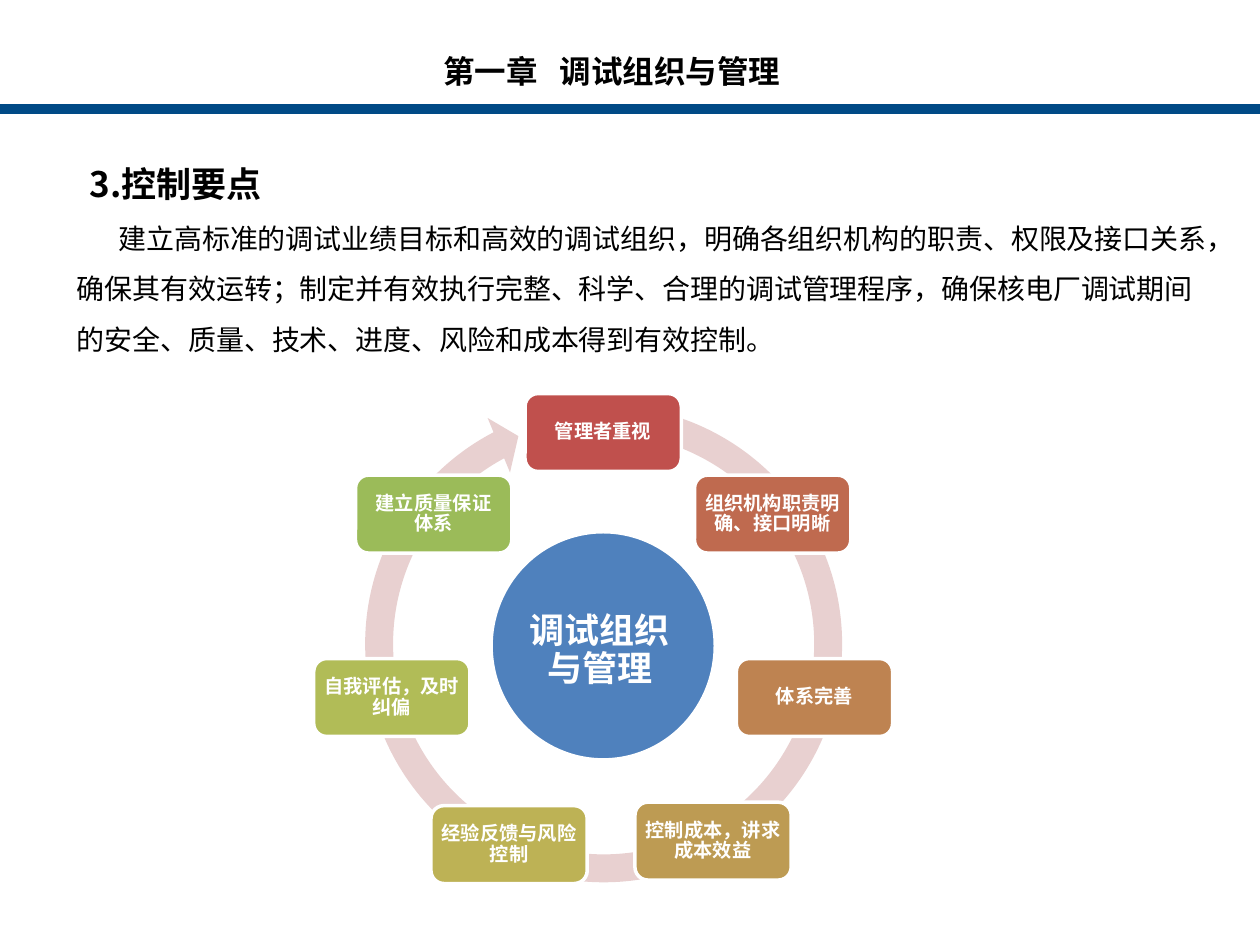
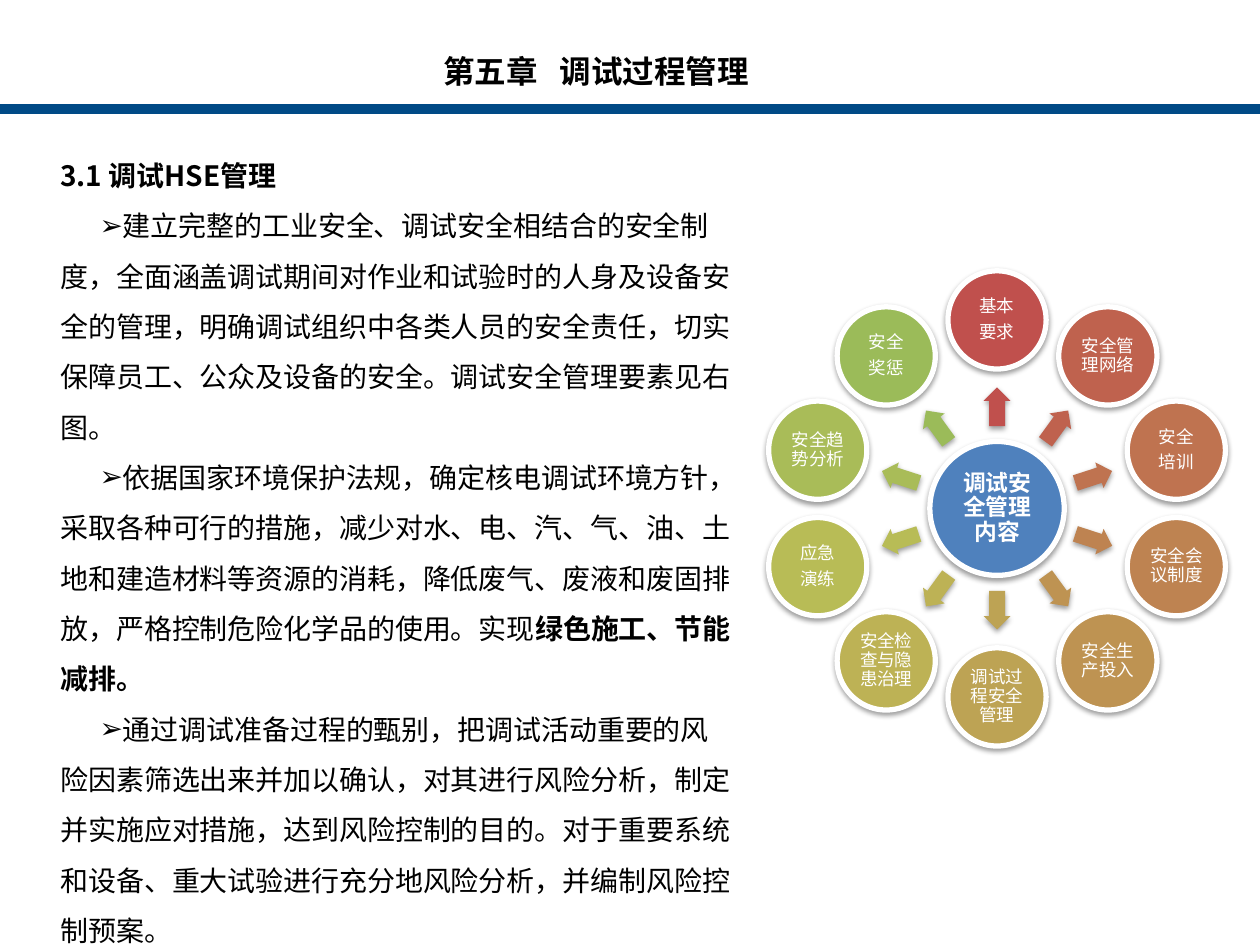
import colorsys
import math
from dataclasses import dataclass

from lxml import etree
from pptx import Presentation
from pptx import util as u
from pptx.dml.color import RGBColor
from pptx.enum import shapes, text
from pptx.oxml import ns

Cm, Pt = u.Cm, u.Pt
SHAPE = shapes.MSO_SHAPE


# Colours, fonts and type sizes
@dataclass(frozen=True)
class Theme:
    band: str = "004A86"
    ink: str = "000000"
    white: str = "FFFFFF"
    hub: str = "4F81BD"
    ring: str = "E8D0D0"
    first_node: str = "C0504D"
    last_node: str = "9BBB59"
    latin: str = "Calibri"
    chinese: str = "Noto Sans CJK SC"
    title: int = 18
    heading: int = 20
    body: int = 16
    node: int = 11
    satellite: int = 10
    hub_small: int = 13


def blend_hues(start, end, count):
    """Evenly spaced colours between two, along the hue circle."""
    first, last = (colorsys.rgb_to_hls(*(c / 255 for c in bytes.fromhex(code)))
                   for code in (start, end))
    colours = []
    for step in range(count):
        share = step / (count - 1)
        hls = [a + (b - a) * share for a, b in zip(first, last)]
        colours.append("".join(f"{round(c * 255):02X}" for c in colorsys.hls_to_rgb(*hls)))
    return colours


def orbit(centre, radius, degrees):
    """Point on a circle, with degrees clockwise from the top."""
    angle = math.radians(degrees)
    return centre[0] + radius * math.sin(angle), centre[1] - radius * math.cos(angle)


class Slides:
    def __init__(self, theme):
        self.theme = theme
        self.deck = Presentation()
        self.deck.slide_width, self.deck.slide_height = Cm(25.4), Cm(19.05)
        self.page = None

    def new_page(self, chapter, title):
        self.page = self.deck.slides.add_slide(self.deck.slide_layouts[6])
        self.shape(SHAPE.RECTANGLE, (12.7, 2.2), (25.4, 0.14),
                   self.theme.band, line=self.theme.band)
        frame = self.text_box(8.69, 0.93, 7.6, 1.02)
        para = frame.paragraphs[0]
        tabs = etree.SubElement(para._p.get_or_add_pPr(), ns.qn("a:tabLst"))
        etree.SubElement(tabs, ns.qn("a:tab"), pos=str(Cm(2.34)), algn="l")
        para.text = f"{chapter}\t{title}"
        self.style(para, self.theme.title, bold=True)

    def style(self, para, size, colour=None, bold=False, font=None):
        for span in para.runs:
            span.font.size, span.font.bold = Pt(size), bold
            span.font.name = font or self.theme.latin
            span.font.color.rgb = RGBColor.from_string(colour or self.theme.ink)
            properties = span._r.get_or_add_rPr()
            properties.set("lang", "zh-CN")
            etree.SubElement(properties, ns.qn("a:ea"), typeface=self.theme.chinese)

    def text_box(self, left, top, width, height):
        box = self.page.shapes.add_textbox(Cm(left), Cm(top), Cm(width), Cm(height))
        box.text_frame.word_wrap = True
        return box.text_frame

    def prose(self, para, content, size, first_line, margin=0, bullet=None,
              bold=False, font=None, bold_end=""):
        properties = para._p.get_or_add_pPr()
        properties.set("marL", str(Cm(margin)))
        properties.set("indent", str(Cm(first_line)))
        if bullet:
            etree.SubElement(properties, ns.qn("a:buFont"), typeface=self.theme.latin)
            etree.SubElement(properties, ns.qn("a:buChar"), char=bullet)
        para.line_spacing = 1.5
        para.text = content
        if bold_end:
            para.add_run().text = bold_end
        self.style(para, size, bold=bold, font=font)
        if bold_end:
            para.runs[-1].font.bold = True

    def shape(self, kind, centre, size, fill, line=None, line_width=2, shadow=False):
        (x, y), (width, height) = centre, size
        item = self.page.shapes.add_shape(kind, Cm(x - width / 2), Cm(y - height / 2),
                                          Cm(width), Cm(height))
        item.fill.solid()
        item.fill.fore_color.rgb = RGBColor.from_string(fill)
        if line:
            item.line.color.rgb = RGBColor.from_string(line)
            item.line.width = Pt(line_width)
        else:
            item.line.fill.background()
        item.shadow.inherit = False
        if shadow:
            effects = item._element.spPr.find(ns.qn("a:effectLst"))
            outer = etree.SubElement(effects, ns.qn("a:outerShdw"), blurRad=str(Pt(3.1)),
                                     dist=str(Pt(1.6)), dir="5400000", rotWithShape="0")
            colour = etree.SubElement(outer, ns.qn("a:srgbClr"), val=self.theme.ink)
            etree.SubElement(colour, ns.qn("a:alpha"), val="38000")
        return item

    def label(self, item, content, size, inset, bold=True, shift=(0, 0)):
        right, down = shift
        frame = item.text_frame
        frame.word_wrap = True
        frame.vertical_anchor = text.MSO_ANCHOR.MIDDLE
        frame.margin_left, frame.margin_right = Cm(inset + right), Cm(inset - right)
        frame.margin_top, frame.margin_bottom = Cm(inset + down), Cm(inset - down)
        frame.text = content
        for number, para in enumerate(frame.paragraphs):
            para.alignment = text.PP_ALIGN.CENTER
            para.line_spacing = 0.9
            if number:
                para.space_before = Pt(3.7)
            self.style(para, size, self.theme.white, bold)


def control_points(slides):
    theme = slides.theme
    slides.new_page("第一章", "调试组织与管理")

    # Heading and introduction
    frame = slides.text_box(1.3, 2.73, 23.39, 4.62)
    slides.prose(frame.paragraphs[0], "3.控制要点", theme.heading, 0.26,
                 bold=True, font=theme.chinese)
    slides.prose(frame.add_paragraph(),
                 "建立高标准的调试业绩目标和高效的调试组织，明确各组织机构的职责、权限及接口关系，"
                 "确保其有效运转；制定并有效执行完整、科学、合理的调试管理程序，确保核电厂调试期间"
                 "的安全、质量、技术、进度、风险和成本得到有效控制。", theme.body, 0.84)

    # Cycle of control points
    ring = slides.shape(SHAPE.CIRCULAR_ARROW, (12.17, 12.98), (10.24, 10.24), theme.ring)
    for index, value in enumerate((0.055, 3.307, 145.305, 169.418, 0.058)):
        ring.adjustments[index] = value
    points = ["管理者重视", "组织机构职责明确、接口明晰", "体系完善", "控制成本，讲求成本效益",
              "经验反馈与风险控制", "自我评估，及时纠偏", "建立质量保证 体系"]
    nudges = {3: (0.32, -0.07)}
    colours = blend_hues(theme.first_node, theme.last_node, len(points))
    for index, (point, colour) in enumerate(zip(points, colours)):
        x, y = orbit((12.16, 13.09), 4.37, index * 360 / len(points))
        dx, dy = nudges.get(index, (0, 0))
        node = slides.shape(SHAPE.ROUNDED_RECTANGLE, (x + dx, y + dy), (3.15, 1.57),
                            colour, theme.white)
        slides.label(node, point, theme.node, 0.13)

    hub = slides.shape(SHAPE.OVAL, (12.16, 13.02), (4.52, 4.6), theme.hub, theme.white)
    slides.label(hub, "调试组织与管理", theme.heading, 0.13, shift=(-0.07, 0.1))


def safety_management(slides):
    theme = slides.theme
    slides.new_page("第五章", "调试过程管理")

    # Heading and bulleted text
    frame = slides.text_box(0.5, 2.73, 14.54, 15.65)
    slides.prose(frame.paragraphs[0], "3.1 调试HSE管理", theme.body, 0.47,
                 bold=True, font=theme.chinese)
    measures = [
        ("建立完整的工业安全、调试安全相结合的安全制度，全面涵盖调试期间对作业和试验时的人身及"
         "设备安全的管理，明确调试组织中各类人员的安全责任，切实保障员工、公众及设备的安全。"
         "调试安全管理要素见右图。", ""),
        ("依据国家环境保护法规，确定核电调试环境方针，采取各种可行的措施，减少对水、电、汽、气、"
         "油、土地和建造材料等资源的消耗，降低废气、废液和废固排放，严格控制危险化学品的使用。"
         "实现", "绿色施工、节能减排。"),
        ("通过调试准备过程的甄别，把调试活动重要的风险因素筛选出来并加以确认，对其进行风险分析，"
         "制定并实施应对措施，达到风险控制的目的。对于重要系统和设备、重大试验进行充分地风险分析，"
         "并编制风险控制预案。", ""),
    ]
    for measure, bold_end in measures:
        slides.prose(frame.add_paragraph(), measure, theme.body, 0.79, margin=0.47,
                     bullet="➢", bold_end=bold_end)

    # Hub with radiating safety topics
    centre = (20.1, 10.25)
    hub = slides.shape(SHAPE.OVAL, centre, (2.71, 2.7), theme.hub, theme.white, 3, shadow=True)
    slides.label(hub, "调试安全管理内容", theme.hub_small, 0.05)
    topics = ["基本\n要求", "安全管理网络", "安全\n培训", "安全会议制度", "安全生产投入",
              "调试过程安全管理", "安全检查与隐患治理", "应急\n演练", "安全趋势分析", "安全\n奖惩"]
    colours = blend_hues(theme.first_node, theme.last_node, len(topics))
    for index, (topic, colour) in enumerate(zip(topics, colours)):
        degrees = index * 360 / len(topics)
        arrow = slides.shape(SHAPE.RIGHT_ARROW, orbit(centre, 2.05, degrees), (0.78, 0.54),
                             colour, shadow=True)
        arrow.adjustments[0] = 0.6
        arrow.rotation = (degrees - 90) % 360
        satellite = slides.shape(SHAPE.OVAL, orbit(centre, 3.8, degrees), (1.98, 1.98),
                                 colour, theme.white, 3, shadow=True)
        slides.label(satellite, topic, theme.satellite, 0.03, bold=False)


def main():
    slides = Slides(Theme())
    control_points(slides)
    safety_management(slides)
    slides.deck.save("out.pptx")


if __name__ == "__main__":
    main()
